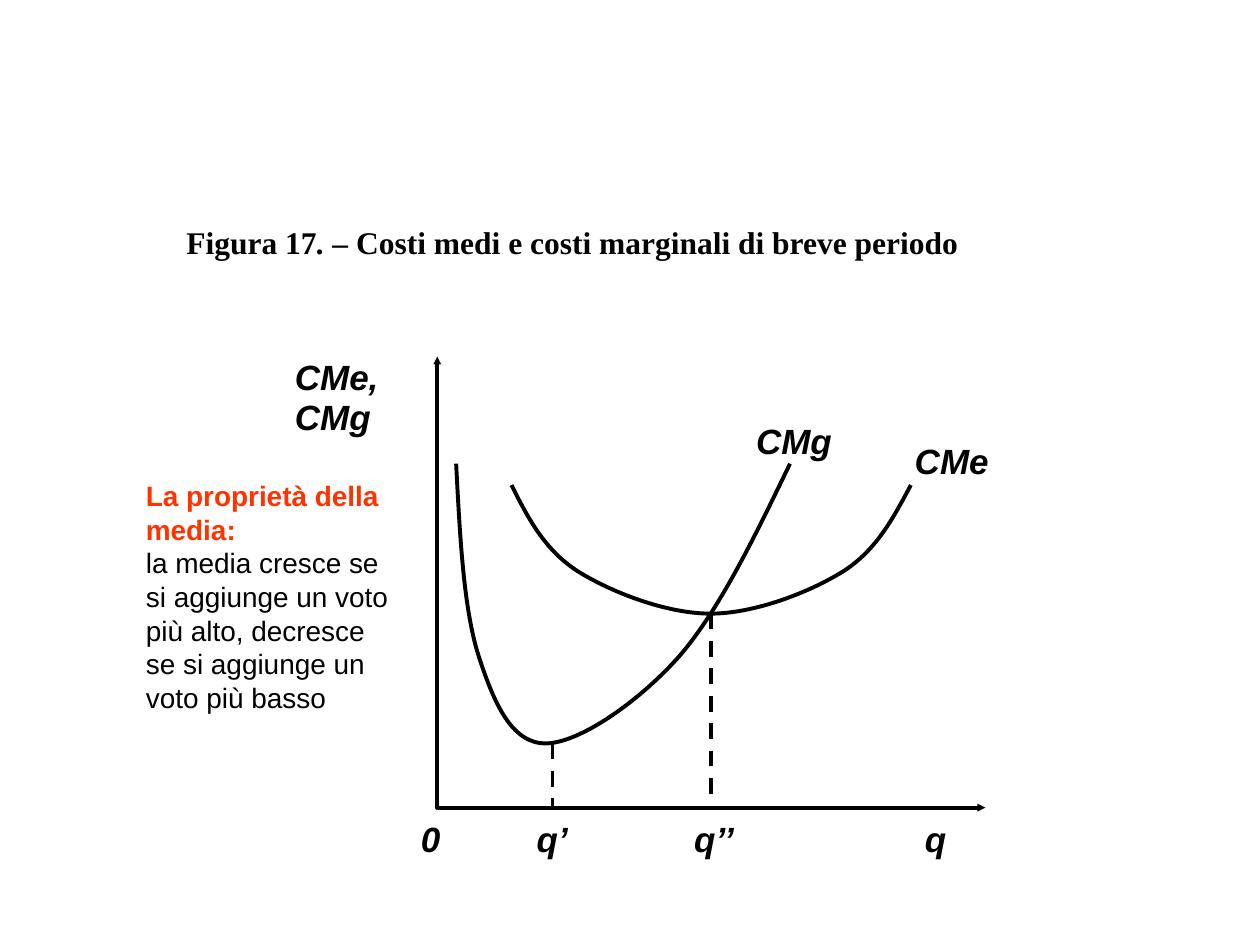
import pptx
import pptx.dml.color
import pptx.enum.dml
import pptx.enum.shapes
import pptx.enum.text
import pptx.oxml
import pptx.oxml.ns
import pptx.util

THEME = {
    "ink": pptx.dml.color.RGBColor(0, 0, 0),
    "accent": pptx.dml.color.RGBColor(0xFF, 0x33, 0x00),
    "title_font": "Times New Roman",
    "font": "Arial",
    "title": pptx.util.Pt(18),
    "label": pptx.util.Pt(20),
    "note": pptx.util.Pt(16),
    "line": pptx.util.Pt(2.25),
}

deck = pptx.Presentation()
deck.slide_width = pptx.util.Inches(10)
deck.slide_height = pptx.util.Inches(7.5)
COLUMN = deck.slide_width / 10
ROW = deck.slide_height / 7.5
page = deck.slides.add_slide(deck.slide_layouts[5])


def grid(*lengths):
    """Turn alternating columns and rows into slide lengths."""
    return [round(n * (ROW if i % 2 else COLUMN)) for i, n in enumerate(lengths)]


def draw_path(points, curved):
    """Draw an open path; if curved, each three points after the first form a Bézier."""
    corners = [grid(*point) for point in points]
    builder = page.shapes.build_freeform(*corners[0])
    builder.add_line_segments(corners[1:], close=False)
    shape = builder.convert_to_shape()
    shape.shadow.inherit = False
    shape.fill.background()
    shape.line.color.rgb = THEME["ink"]
    shape.line.width = THEME["line"]
    if curved:
        segments = list(shape.element.iter(pptx.oxml.ns.qn("a:lnTo")))
        for start in range(0, len(segments), 3):
            bezier = pptx.oxml.parse_xml(
                f'<a:cubicBezTo {pptx.oxml.ns.nsdecls("a")}/>')
            segments[start].addprevious(bezier)
            for segment in segments[start:start + 3]:
                bezier.append(segment[0])
                segment.getparent().remove(segment)
    return shape


# Title
title = page.shapes.title
title.left, title.top, title.width, title.height = grid(1.38, 1.7, 7.64, 0.47)
frame = title.text_frame
frame.word_wrap = True
frame.auto_size = pptx.enum.text.MSO_AUTO_SIZE.NONE
frame.vertical_anchor = pptx.enum.text.MSO_ANCHOR.MIDDLE
para = frame.paragraphs[0]
para.alignment = pptx.enum.text.PP_ALIGN.LEFT
para.line_spacing = 0.9
para.font.name = THEME["title_font"]
para.font.size = THEME["title"]
para.font.bold = True
para.font.color.rgb = THEME["ink"]
for words, italic in [("Figura 17", False), (". –", True),
                      (" Costi medi e costi marginali di breve periodo", False)]:
    span = para.add_run()
    span.text = words
    span.font.italic = italic

# Cost curves
marginal_cost = [(3.62, 3.68), (3.65, 4.26), (3.68, 4.84), (3.8, 5.21),
                 (3.92, 5.58), (4.06, 5.9), (4.33, 5.9),
                 (4.59, 5.9), (5.06, 5.58), (5.39, 5.21),
                 (5.71, 4.84), (5.99, 4.26), (6.27, 3.68)]
average_cost = [(4.06, 3.85), (4.19, 4.11), (4.32, 4.36), (4.58, 4.53),
                (4.85, 4.7), (5.29, 4.87), (5.64, 4.87),
                (5.99, 4.87), (6.43, 4.7), (6.7, 4.53),
                (6.96, 4.36), (7.09, 4.11), (7.23, 3.85)]
for curve in (marginal_cost, average_cost):
    draw_path(curve, curved=True)

# Axes, with an arrowhead at both ends
AXIS = 6.41
axes = draw_path([(3.47, 2.83), (3.47, AXIS), (7.82, AXIS)], curved=False)
for end in ("headEnd", "tailEnd"):
    axes.line._get_or_add_ln().append(pptx.oxml.parse_xml(
        f'<a:{end} {pptx.oxml.ns.nsdecls("a")} type="triangle" w="sm" len="sm"/>'))

# Dashed drops from each minimum to the axis
for x, minimum in [(4.385, 5.9), (5.64, 4.87)]:
    drop = page.shapes.add_connector(
        pptx.enum.shapes.MSO_CONNECTOR.STRAIGHT, *grid(x, minimum, x, AXIS))
    drop.line.color.rgb = THEME["ink"]
    drop.line.width = THEME["line"]
    drop.line.dash_style = pptx.enum.dml.MSO_LINE.DASH
    drop.element.spPr.append(pptx.oxml.parse_xml(
        f'<a:effectLst {pptx.oxml.ns.nsdecls("a")}/>'))

# Labels of axes, curves and quantities
for text, *place in [
    ("CMe, CMg", 2.33, 2.83, 1.17, 0.66),
    ("CMg", 5.99, 3.34, 0.88, 0.51),
    ("CMe", 7.25, 3.5, 0.65, 0.44),
    ("0", 3.33, 6.5, 0.25, 0.34),
    ("q’", 4.25, 6.5, 0.53, 0.34),
    ("q’’", 5.5, 6.5, 0.53, 0.34),
    ("q", 7.33, 6.5, 0.53, 0.34),
]:
    frame = page.shapes.add_textbox(*grid(*place)).text_frame
    frame.word_wrap = True
    frame.margin_left = frame.margin_right = round(COLUMN / 100)
    frame.margin_top = frame.margin_bottom = round(ROW / 100)
    para = frame.paragraphs[0]
    para.text = text
    para.line_spacing = 0.96
    para.font.name = THEME["font"]
    para.font.size = THEME["label"]
    para.font.bold = para.font.italic = True
    para.font.color.rgb = THEME["ink"]

# Note on the property of the mean
frame = page.shapes.add_textbox(*grid(1.06, 3.75, 2.2, 2.48)).text_frame
frame.word_wrap = True
frame.auto_size = pptx.enum.text.MSO_AUTO_SIZE.SHAPE_TO_FIT_TEXT
frame.text = ("La proprietà della media:\n"
              "la media cresce se si aggiunge un voto più alto, "
              "decresce se si aggiunge un voto più basso")
for para, color, bold in zip(frame.paragraphs, (THEME["accent"], THEME["ink"]),
                             (True, False)):
    para.font.name = THEME["font"]
    para.font.size = THEME["note"]
    para.font.bold = bold
    para.font.color.rgb = color

deck.save("out.pptx")
